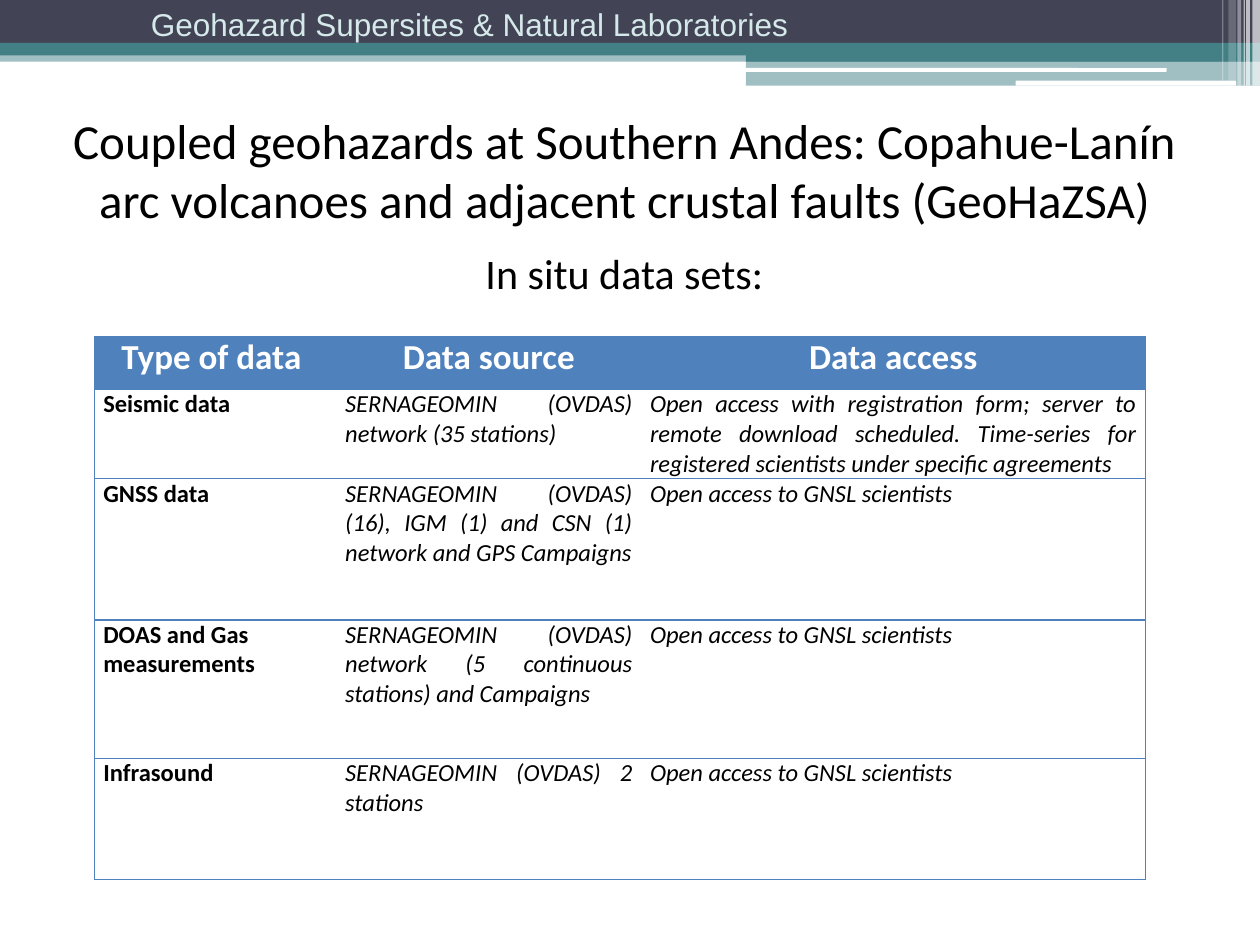
import pptx
import pptx.dml.color
import pptx.enum.shapes
import pptx.enum.text
import pptx.oxml
import pptx.oxml.ns
import pptx.oxml.xmlchemy
import pptx.util
from pptx.util import Inches

ALIGN = pptx.enum.text.PP_ALIGN
ANCHOR = pptx.enum.text.MSO_ANCHOR
SHAPE = pptx.enum.shapes.MSO_SHAPE


def colour(value):
    return pptx.dml.color.RGBColor.from_string(value)


def write(para, text, size, font="Calibri", color="000000", bold=False,
          italic=False, align=ALIGN.LEFT, before=None, after=None):
    para.alignment = align
    if before is not None:
        para.space_before = pptx.util.Pt(before)
    if after is not None:
        para.space_after = pptx.util.Pt(after)
    span = para.add_run()
    span.text = text
    span.font.size = pptx.util.Pt(size)
    span.font.name = font
    span.font.bold = bold
    span.font.italic = italic
    span.font.color.rgb = colour(color)


class Builder:
    navy, teal, white, blue = "424456", "438086", "FFFFFF", "4F81BD"

    def __init__(self, deck):
        self.page = deck.slides.add_slide(deck.slide_layouts[6])

    def bar(self, left, top, width, height, fill, opacity=100, kind=SHAPE.RECTANGLE):
        shape = self.page.shapes.add_shape(
            kind, Inches(left), Inches(top), Inches(width), Inches(height))
        shape.shadow.inherit = False
        shape.line.fill.background()
        shape.fill.solid()
        shape.fill.fore_color.rgb = colour(fill)
        if opacity < 100:
            tint = shape._element.spPr.find(".//" + pptx.oxml.ns.qn("a:srgbClr"))
            alpha = pptx.oxml.xmlchemy.OxmlElement("a:alpha")
            alpha.set("val", str(opacity * 1000))
            tint.append(alpha)

    def text_box(self, left, top, width, height, wrap=True, anchor=ANCHOR.TOP):
        box = self.page.shapes.add_textbox(
            Inches(left), Inches(top), Inches(width), Inches(height))
        box.text_frame.word_wrap = wrap
        box.text_frame.vertical_anchor = anchor
        return box.text_frame

    def borders(self, cell, sides):
        properties = cell._tc.get_or_add_tcPr()
        for side in "LRTB":
            fill = "<a:noFill/>"
            if side in sides:
                fill = f'<a:solidFill><a:srgbClr val="{self.blue}"/></a:solidFill>'
            properties.append(pptx.oxml.parse_xml(
                f'<a:ln{side} {pptx.oxml.ns.nsdecls("a")} w="12700">{fill}</a:ln{side}>'))

    def table(self, left, top, widths, heights, rows):
        table = self.page.shapes.add_table(
            len(rows), len(widths), Inches(left), Inches(top),
            Inches(sum(widths)), Inches(sum(heights))).table
        table.horz_banding = False
        for column, width in zip(table.columns, widths):
            column.width = Inches(width)
        for row, height in zip(table.rows, heights):
            row.height = Inches(height)
        edges = ["LTB"] + ["TB"] * (len(widths) - 2) + ["RTB"]
        for r, texts in enumerate(rows):
            for c, text in enumerate(texts):
                cell = table.cell(r, c)
                self.borders(cell, edges[c])
                cell.margin_left = cell.margin_right = Inches(0.07)
                cell.margin_top = cell.margin_bottom = 0
                para = cell.text_frame.paragraphs[0]
                if r == 0:
                    cell.fill.solid()
                    cell.fill.fore_color.rgb = colour(self.blue)
                    write(para, text, 20, color=self.white, bold=True,
                          align=ALIGN.CENTER, after=6)
                else:
                    cell.fill.background()
                    write(para, text, 14, bold=c == 0, italic=c > 0,
                          align=ALIGN.JUSTIFY if c else ALIGN.LEFT, after=6)


def main():
    deck = pptx.Presentation()
    deck.slide_width, deck.slide_height = Inches(10), Inches(7.5)
    slide = Builder(deck)

    slide.bar(0, 0.4, 10, 0.09, slide.teal, 50)
    slide.bar(0, 0, 10, 0.34, slide.navy)
    slide.bar(0, 0.34, 10, 0.1, slide.teal)
    slide.bar(5.92, 0.39, 4.08, 0.1, slide.teal)
    slide.bar(5.92, 0.48, 4.08, 0.2, slide.teal, 50)
    slide.bar(5.91, 0.54, 3.35, 0.03, slide.white, kind=SHAPE.ROUNDED_RECTANGLE)
    slide.bar(8.06, 0.64, 1.75, 0.04, slide.white, kind=SHAPE.ROUNDED_RECTANGLE)
    stripes = [(9.94, 0.06, 0.68, 65), (9.89, 0.03, 0.68, 65), (9.87, 0.01, 0.68, 60),
               (9.82, 0.03, 0.68, 40), (9.75, 0.06, 0.64, 20), (9.7, 0.01, 0.64, 30)]
    for left, width, height, opacity in stripes:
        slide.bar(left, 0, width, height, slide.white, opacity)

    banner = slide.text_box(1.1, -0.01, 5.43, 0.4, wrap=False)
    write(banner.paragraphs[0], "Geohazard Supersites & Natural Laboratories", 18,
          font="Arial", color="D6E9EA")

    title = slide.text_box(0.33, 0.83, 9.25, 1.58, anchor=ANCHOR.MIDDLE)
    write(title.paragraphs[0],
          "Coupled geohazards at Southern Andes: Copahue-Lanín arc volcanoes "
          "and adjacent crustal faults (GeoHaZSA)", 28, align=ALIGN.CENTER)
    write(title.add_paragraph(), "In situ data sets:", 24, align=ALIGN.CENTER, before=11)

    gnsl = "Open access to GNSL scientists"
    slide.table(0.75, 2.67, [1.92, 2.42, 4], [0.42, 0.71, 1.12, 1.1, 0.96], [
        ["Type of data ", "Data source", "Data access"],
        ["Seismic data", "SERNAGEOMIN (OVDAS) network (35 stations)",
         "Open access with registration form; server to remote download scheduled. "
         "Time-series for registered scientists under specific agreements"],
        ["GNSS data", "SERNAGEOMIN (OVDAS) (16), IGM (1) and CSN (1) network "
         "and GPS Campaigns", gnsl],
        ["DOAS and Gas measurements", "SERNAGEOMIN (OVDAS) network "
         "(5 continuous stations) and Campaigns", gnsl],
        ["Infrasound", "SERNAGEOMIN (OVDAS) 2 stations", gnsl],
    ])
    deck.save("out.pptx")


if __name__ == "__main__":
    main()
